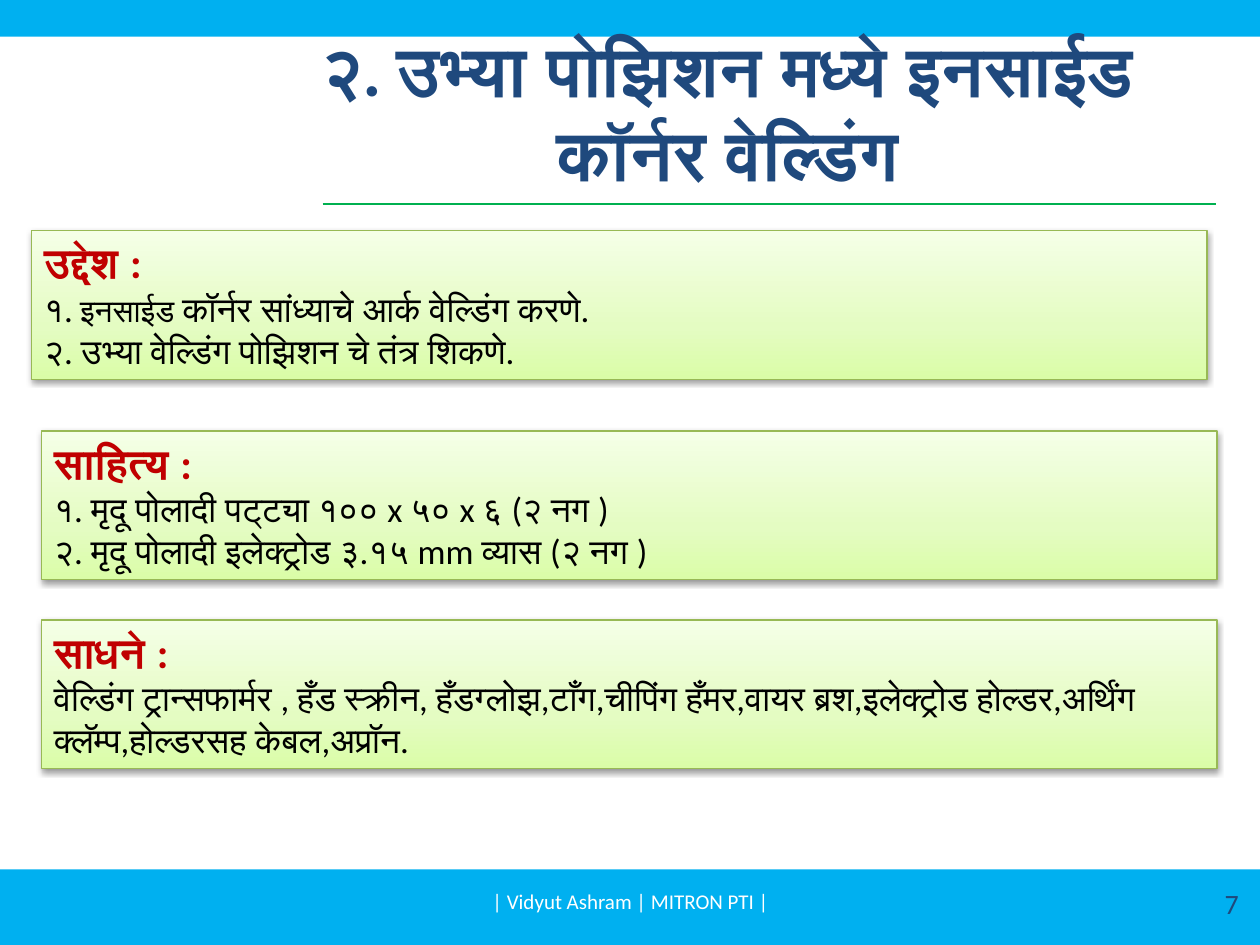
from lxml import etree
from pptx import Presentation
from pptx.dml.color import RGBColor
from pptx.enum.shapes import MSO_CONNECTOR, MSO_SHAPE
from pptx.enum.text import MSO_ANCHOR, MSO_AUTO_SIZE, PP_ALIGN
from pptx.oxml.ns import qn
from pptx.util import Inches, Pt

RECT, STRAIGHT = MSO_SHAPE.RECTANGLE, MSO_CONNECTOR.STRAIGHT
TOP, MIDDLE = MSO_ANCHOR.TOP, MSO_ANCHOR.MIDDLE
LEFT, CENTER, RIGHT = PP_ALIGN.LEFT, PP_ALIGN.CENTER, PP_ALIGN.RIGHT
GROW = MSO_AUTO_SIZE.SHAPE_TO_FIT_TEXT

THEME = {
    "font": "Calibri",
    "bar": "00B0F0",
    "rule": "00B050",
    "border": "98B955",
    "gradient": [(0, "DAFDA7"), (35, "E4FCC2"), (100, "F5FFE7")],
    "shadow": {"blurRad": Pt(3.1), "dist": Pt(1.6), "dir": 90 * 60000},
    "shadow_alpha": 38,
    "title": {"size": 40, "color": "1F497D", "bold": True},
    "number": {"size": 16, "color": "1F497D", "bold": False},
    "footer": {"size": 12, "color": "FFFFFF", "bold": False},
    "heading": {"size": 24, "color": "C00000", "bold": True},
    "body": {"size": 20, "color": "000000", "bold": False},
    "small": {"size": 18, "color": "000000", "bold": False},
}

BARS = [(0, 0, 10, 0.29), (0, 6.9, 10, 0.6)]
LABELS = [
    ("title", "२. उभ्या पोझिशन मध्ये इनसाईड कॉर्नर वेल्डिंग", (2.05, -0.08, 7.45, 1.92), CENTER),
    ("number", "7", (7.6, 6.97, 2.33, 0.4), RIGHT),
    ("footer", "| Vidyut Ashram | MITRON PTI |", (3.42, 6.95, 3.17, 0.4), CENTER),
]
PANEL_SIZE = (9.33, 1.18)
PANELS = [
    (0.25, 1.83, "उद्देश :", [
        [("body", "१."), ("small", " इनसाईड "), ("body", "कॉर्नर सांध्याचे आर्क वेल्डिंग करणे.")],
        [("body", "२. उभ्या वेल्डिंग पोझिशन चे तंत्र शिकणे.")],
    ]),
    (0.33, 3.42, "साहित्य :", [
        [("body", "१. मृदू पोलादी पट्ट्या १०० x ५० x ६ (२ नग )")],
        [("body", "२. मृदू पोलादी इलेक्ट्रोड ३.१५ mm व्यास (२ नग )")],
    ]),
    (0.33, 4.92, "साधने :", [
        [("body", "वेल्डिंग ट्रान्सफार्मर , हँड स्क्रीन, हँडग्लोझ,टाँग,चीपिंग हँमर,वायर ब्रश,"
                  "इलेक्ट्रोड होल्डर,अर्थिंग क्लॅम्प,होल्डरसह केबल,अप्रॉन.")],
    ]),
]


def rgb(value):
    return RGBColor.from_string(value)


def write(sp, paragraphs, align, anchor):
    tf = sp.text_frame
    for name, value in {"word_wrap": True, "vertical_anchor": anchor}.items():
        setattr(tf, name, value)
    for i, runs in enumerate(paragraphs):
        p = tf.add_paragraph() if i else tf.paragraphs[0]
        p.alignment = align
        for style, text in runs:
            r = p.add_run()
            r.text = text
            look = THEME[style]
            formats = {"name": THEME["font"], "size": Pt(look["size"]), "bold": look["bold"]}
            for name, value in formats.items():
                setattr(r.font, name, value)
            r.font.color.rgb = rgb(look["color"])


def add_color(parent, color):
    return etree.SubElement(parent, qn("a:srgbClr"), val=color)


def add_rect(s, box):
    sp = s.shapes.add_shape(RECT, *map(Inches, box))
    sp.shadow.inherit = False
    return sp


def add_bar(s, box):
    sp = add_rect(s, box)
    sp.fill.solid()
    sp.fill.fore_color.rgb = rgb(THEME["bar"])
    sp.line.fill.background()


def add_rule(s):
    line = s.shapes.add_connector(STRAIGHT, *map(Inches, (2.56, 1.62, 9.65, 1.62)))
    line.line.color.rgb = rgb(THEME["rule"])
    line.line.width = Pt(0.75)
    etree.SubElement(line._element.spPr, qn("a:effectLst"))


def add_panel(s, left, top, heading, lines):
    sp = add_rect(s, (left, top, *PANEL_SIZE))
    sp.line.color.rgb = rgb(THEME["border"])
    sp.line.width = Pt(0.75)
    sp.fill.gradient()
    sp.fill.gradient_angle = 90
    props = sp._element.spPr
    stops = props.find(".//" + qn("a:gsLst"))
    for stop in list(stops):
        stops.remove(stop)
    for pos, color in THEME["gradient"]:
        add_color(etree.SubElement(stops, qn("a:gs"), pos=str(pos * 1000)), color)
    shadow = etree.SubElement(props.find(qn("a:effectLst")), qn("a:outerShdw"), rotWithShape="0")
    for name, value in THEME["shadow"].items():
        shadow.set(name, str(int(value)))
    etree.SubElement(add_color(shadow, "000000"), qn("a:alpha"), val=str(THEME["shadow_alpha"] * 1000))
    write(sp, [[("heading", heading)], *lines], LEFT, TOP)
    sp.text_frame.auto_size = GROW


def main():
    prs = Presentation()
    prs.slide_width, prs.slide_height = Inches(10), Inches(7.5)
    s = prs.slides.add_slide(prs.slide_layouts[6])
    for box in BARS:
        add_bar(s, box)
    add_rule(s)
    for style, text, box, align in LABELS:
        sp = s.shapes.add_textbox(*map(Inches, box))
        write(sp, [[(style, text)]], align, MIDDLE)
    for panel in PANELS:
        add_panel(s, *panel)
    prs.save("out.pptx")


if __name__ == "__main__":
    main()
